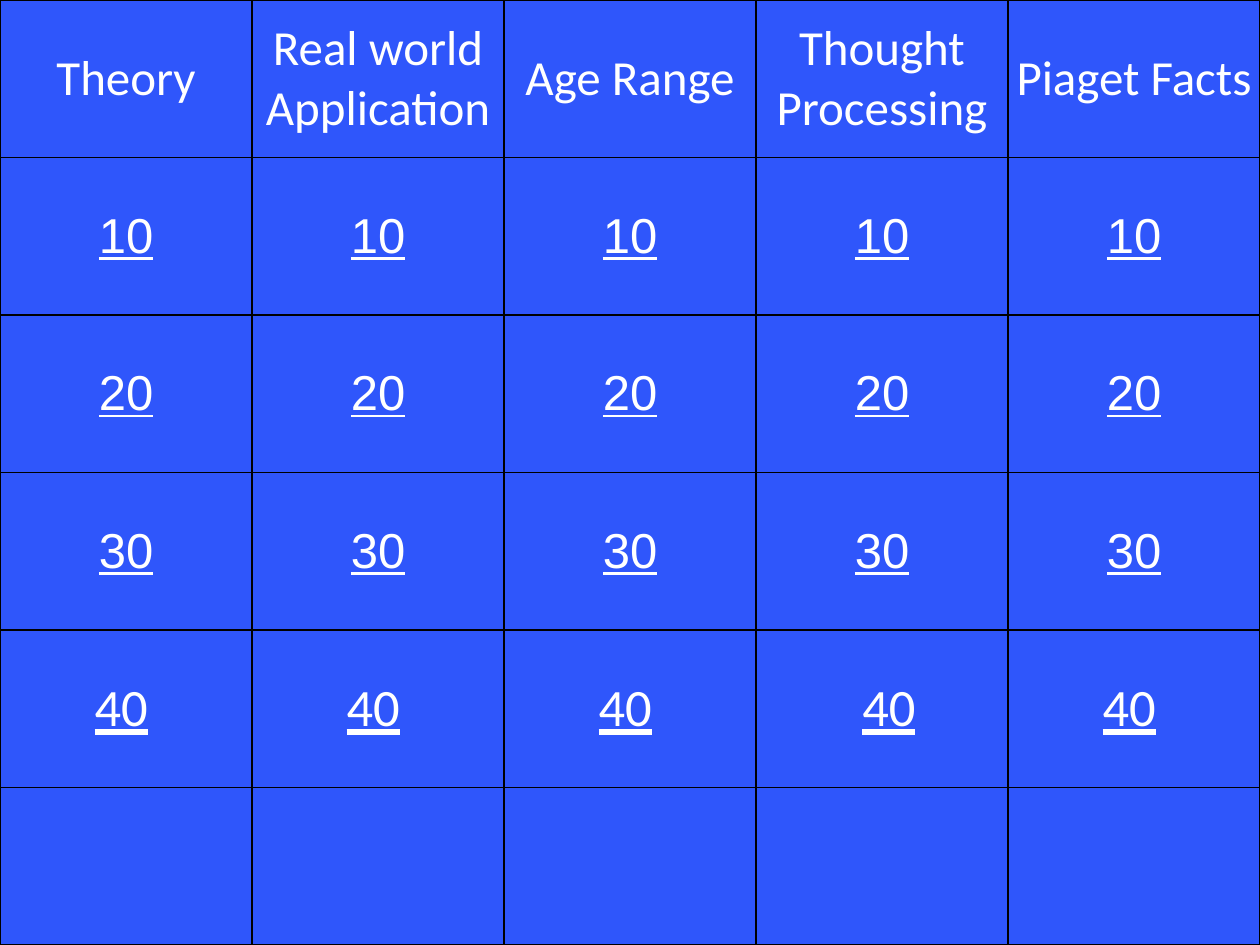
import lxml.etree
import pptx
import pptx.dml.color
import pptx.enum.text
import pptx.oxml.ns
import pptx.util

PX = 9525
BOARD_BLUE, GRID_BLACK, TEXT_WHITE = "2F56FB", "000000", "FFFFFF"
CATEGORIES = ["Theory", "Real world Application", "Age Range", "Thought Processing", "Piaget Facts"]
CENTERED_POINTS = ["10", "20", "30"]
LAST_POINTS = "40"
LAST_INDENTS = [72, 72, 72, 81, 72]


def px(length):
    """Turn a length in px into EMU."""
    return pptx.util.Emu(length * PX)


def color(hex_code):
    """Turn a hex string into a colour."""
    return pptx.dml.color.RGBColor.from_string(hex_code)


def write(cell, text, font="Calibri", size=28, underline=False, indent=None):
    """Write text in a cell, centred unless an indent is given."""
    cell.vertical_anchor = pptx.enum.text.MSO_ANCHOR.MIDDLE
    cell.margin_left = px(indent or 0)
    cell.margin_right = cell.margin_top = cell.margin_bottom = 0
    paragraph = cell.text_frame.paragraphs[0]
    align = pptx.enum.text.PP_ALIGN
    paragraph.alignment = align.CENTER if indent is None else align.LEFT
    run = paragraph.add_run()
    run.text = text
    run.font.name = font
    run.font.size = pptx.util.Pt(size)
    run.font.underline = underline
    run.font.color.rgb = color(TEXT_WHITE)


def outline(cell, hex_code, points):
    """Draw all four borders of a cell and leave it unfilled."""
    properties = cell._tc.get_or_add_tcPr()
    qn = pptx.oxml.ns.qn
    for side in ("a:lnL", "a:lnR", "a:lnT", "a:lnB"):
        border = lxml.etree.SubElement(properties, qn(side), w=str(pptx.util.Pt(points)))
        fill = lxml.etree.SubElement(border, qn("a:solidFill"))
        lxml.etree.SubElement(fill, qn("a:srgbClr"), val=hex_code)
    cell.fill.background()


def add_board(slide, left, top, width, height):
    """Place the quiz board with its categories and point values."""
    columns, rows = len(CATEGORIES), len(CENTERED_POINTS) + 3
    board = slide.shapes.add_table(rows, columns, px(left), px(top), px(width), px(height)).table
    board.first_row = board.horz_banding = False
    for cell in board.iter_cells():
        outline(cell, GRID_BLACK, 1)
    for column, category in enumerate(CATEGORIES):
        write(board.cell(0, column), category)
        for row, points in enumerate(CENTERED_POINTS, start=1):
            write(board.cell(row, column), points, font="Arial", underline=True)
        write(board.cell(rows - 2, column), LAST_POINTS, size=30, underline=True,
              indent=LAST_INDENTS[column])


def main():
    """Build and save the quiz board slide."""
    deck = pptx.Presentation()
    deck.slide_width, deck.slide_height = px(960), px(720)
    slide = deck.slides.add_slide(deck.slide_layouts[6])
    slide.background.fill.solid()
    slide.background.fill.fore_color.rgb = color(BOARD_BLUE)
    add_board(slide, 0, 0, 960, 720)
    deck.save("out.pptx")


if __name__ == "__main__":
    main()
